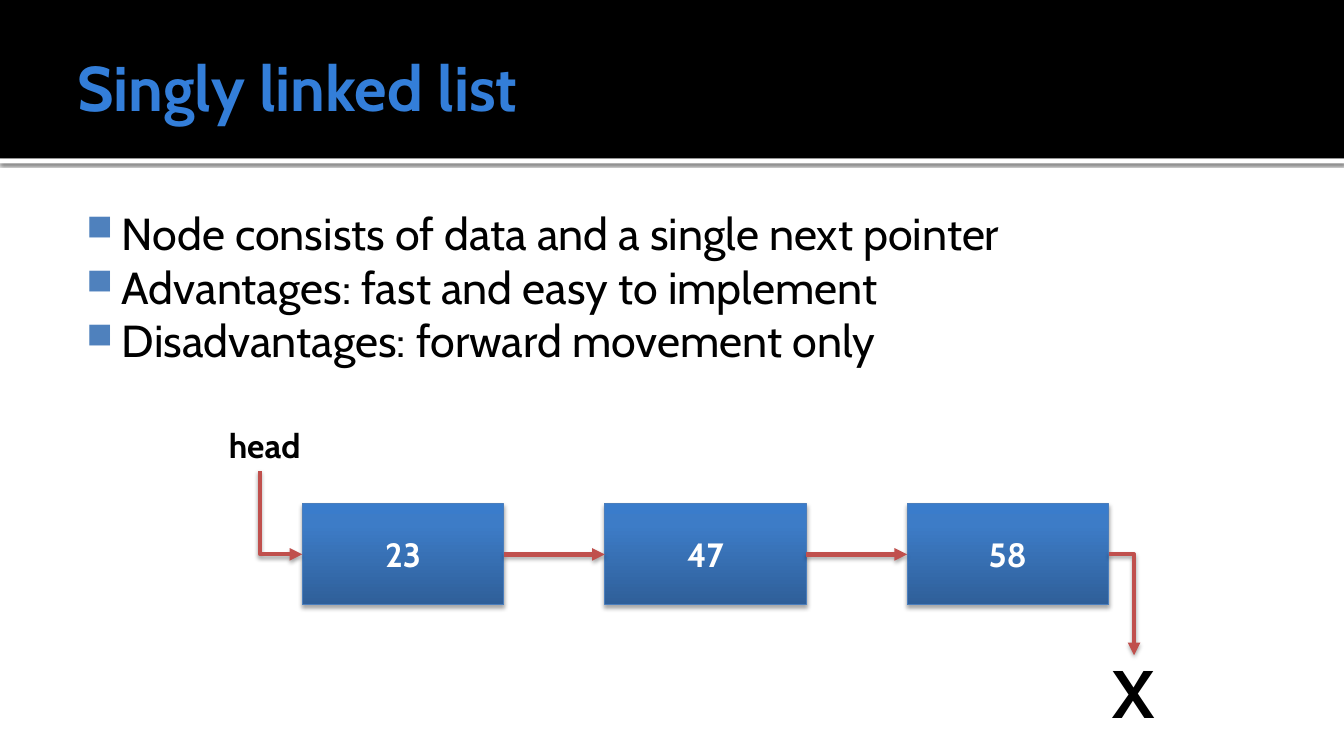
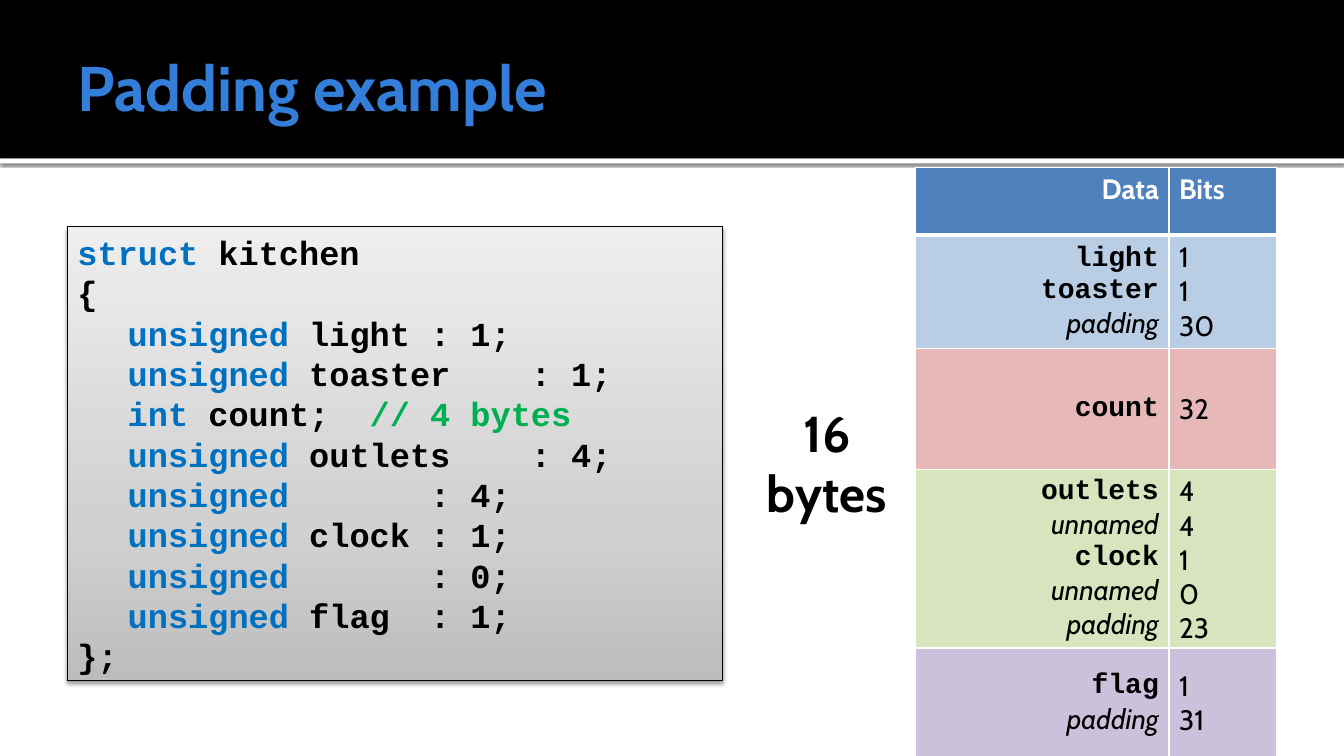
from dataclasses import dataclass

from lxml import etree
from pptx import Presentation
from pptx import util as u
from pptx.dml.color import RGBColor
from pptx.enum import shapes, text
from pptx.oxml import ns


@dataclass(frozen=True)
class Theme:
    font: str = "Cabin"
    code_font: str = "Courier New"
    black: str = "000000"
    white: str = "FFFFFF"
    title: str = "337ED9"
    accent: str = "4F81BD"
    arrow: str = "C0504D"
    node_line: str = "4B7EBC"
    keyword: str = "0070C0"
    comment: str = "00B050"
    node_stops: tuple = ((0, "2F5F99"), (80, "3D7CC7"), (100, "3A7CCB"))
    code_stops: tuple = ((0, "BDBDBD"), (35, "D1D1D1"), (100, "EEEEEE"))
    title_size: float = 45
    body_size: float = 32
    label_size: float = 24
    table_size: float = 20
    total_size: float = 36
    end_size: float = 48


THEME = Theme()
SLIDE_WIDTH, SLIDE_HEIGHT = 33.87, 19.05
MARGIN = 1.7
BAND_HEIGHT = 3.99
NODE_WIDTH, NODE_HEIGHT, NODE_TOP = 5.08, 2.54, 12.7
NODE_STEP = 7.62
CENTER, RIGHT = text.PP_ALIGN.CENTER, text.PP_ALIGN.RIGHT
MIDDLE = text.MSO_ANCHOR.MIDDLE

BULLETS = [
    "Node consists of data and a single next pointer",
    "Advantages: fast and easy to implement",
    "Disadvantages: forward movement only",
]
CODE = [
    ("struct ", "kitchen"),
    ("", "{"),
    ("unsigned ", "light\t: 1;"),
    ("unsigned ", "toaster\t: 1;"),
    ("int ", "count;  ", "// 4 bytes"),
    ("unsigned ", "outlets\t: 4;"),
    ("unsigned", "\t\t: 4;"),
    ("unsigned ", "clock\t: 1;"),
    ("unsigned", "\t\t: 0;"),
    ("unsigned ", "flag\t: 1;"),
    ("", "};"),
]
FIELD_GROUPS = [
    ("B9CDE5", 2.87, [("light", 1), ("toaster", 1), ("padding", 30)]),
    ("E6B9B8", 3.05, [("count", 32)]),
    ("D7E4BD", 4.42, [("outlets", 4), ("unnamed", 4), ("clock", 1),
                      ("unnamed", 0), ("padding", 23)]),
    ("CCC1DA", 2.79, [("flag", 1), ("padding", 31)]),
]


def rgb(color):
    return RGBColor.from_string(color)


def add_xml(parent, tag, **attributes):
    values = {key: str(value) for key, value in attributes.items()}
    return etree.SubElement(parent, ns.qn(tag), values)


def cm_box(left, top, width, height):
    return [u.Cm(value) for value in (left, top, width, height)]


def add_shadow(shape, alpha, blur, distance):
    effects = add_xml(shape._element.spPr, "a:effectLst")
    shadow = add_xml(effects, "a:outerShdw", blurRad=u.Pt(blur), dist=u.Pt(distance),
                     dir=5400000, algn="ctr", rotWithShape=0)
    color = add_xml(shadow, "a:srgbClr", val=THEME.black)
    add_xml(color, "a:alpha", val=alpha * 1000)


def set_gradient(shape, stops):
    shape.fill.gradient()
    gradient = shape._element.spPr.find(ns.qn("a:gradFill"))
    for child in list(gradient):
        gradient.remove(child)
    stop_list = add_xml(gradient, "a:gsLst")
    for position, color in stops:
        stop = add_xml(stop_list, "a:gs", pos=position * 1000)
        add_xml(stop, "a:srgbClr", val=color)
    add_xml(gradient, "a:lin", ang=16200000, scaled=0)


def add_rectangle(slide, box, fill=None, stops=None, line=None, shadow=None):
    shape = slide.shapes.add_shape(shapes.MSO_SHAPE.RECTANGLE, *cm_box(*box))
    if stops:
        set_gradient(shape, stops)
    else:
        shape.fill.solid()
        shape.fill.fore_color.rgb = rgb(fill)
    if line:
        shape.line.color.rgb = rgb(line)
        shape.line.width = u.Pt(0.75)
    else:
        shape.line.fill.background()
    if shadow:
        add_shadow(shape, *shadow)
    else:
        shape.shadow.inherit = False
    return shape


def write_text(paragraph, content, size, font=THEME.font, color=THEME.black,
               bold=False, italic=False, align=None):
    if align is not None:
        paragraph.alignment = align
    run = paragraph.add_run()
    run.text = content
    run.font.size = u.Pt(size)
    run.font.name = font
    run.font.color.rgb = rgb(color)
    run.font.bold = bold
    run.font.italic = italic


def make_paragraphs(frame, count):
    return [frame.paragraphs[0]] + [frame.add_paragraph() for _ in range(count - 1)]


def write_lines(frame, lines, **style):
    for paragraph, line in zip(make_paragraphs(frame, len(lines)), lines):
        write_text(paragraph, line, **style)


def add_text_box(slide, box, lines, anchor=None, insets=None, wrap=True, **style):
    frame = slide.shapes.add_textbox(*cm_box(*box)).text_frame
    frame.word_wrap = wrap
    if anchor is not None:
        frame.vertical_anchor = anchor
    if insets:
        (frame.margin_left, frame.margin_top,
         frame.margin_right, frame.margin_bottom) = [u.Cm(inset) for inset in insets]
    write_lines(frame, lines, **style)
    return frame


def set_bullet(paragraph):
    properties = paragraph._p.get_or_add_pPr()
    properties.set("marL", str(u.Cm(1.22)))
    properties.set("indent", str(u.Cm(-0.89)))
    color = add_xml(properties, "a:buClr")
    add_xml(color, "a:srgbClr", val=THEME.accent)
    add_xml(properties, "a:buSzPct", val=80000)
    add_xml(properties, "a:buChar", char="■")


def add_titled_slide(presentation, title):
    slide = presentation.slides.add_slide(presentation.slide_layouts[6])
    add_rectangle(slide, (0, BAND_HEIGHT, SLIDE_WIDTH, 0.13), THEME.white,
                  shadow=(60, 2.5, 0.8))
    add_rectangle(slide, (0, 0, SLIDE_WIDTH, BAND_HEIGHT), THEME.black)
    add_text_box(slide, (MARGIN, 0.43, 30.48, 3.48), [title], anchor=MIDDLE,
                 insets=(0.25, 0.13, 0.13, 0.13), size=THEME.title_size,
                 color=THEME.title, bold=True)
    return slide


def add_node(slide, index, value):
    box = (NODE_STEP * (index + 1), NODE_TOP, NODE_WIDTH, NODE_HEIGHT)
    node = add_rectangle(slide, box, stops=THEME.node_stops, line=THEME.node_line,
                         shadow=(35, 3.1, 1.8))
    node.text_frame.vertical_anchor = MIDDLE
    write_lines(node.text_frame, [value], size=THEME.label_size, color=THEME.white,
                bold=True, align=CENTER)
    return node


def add_arrow(slide, node, side, target=None, point=None, arrow_end="a:tailEnd"):
    kind = shapes.MSO_CONNECTOR.STRAIGHT if target else shapes.MSO_CONNECTOR.ELBOW
    end = [u.Cm(value) for value in point or (0, 0)]
    connector = slide.shapes.add_connector(kind, 0, 0, *end)
    connector.begin_connect(node, side)
    if target:
        connector.end_connect(target, 1)
    else:
        connector._element.spPr.prstGeom.set("prst", "bentConnector2")
    connector.line.color.rgb = rgb(THEME.arrow)
    connector.line.width = u.Pt(3)
    add_xml(connector.line._get_or_add_ln(), arrow_end, type="triangle")
    add_shadow(connector, 35, 3.1, 1.8)


def add_code(slide, box, lines):
    panel = add_rectangle(slide, box, stops=THEME.code_stops, line=THEME.black,
                          shadow=(38, 3.1, 1.6))
    frame = panel.text_frame
    frame.vertical_anchor = MIDDLE
    colors = (THEME.keyword, THEME.black, THEME.comment)
    for paragraph, parts in zip(make_paragraphs(frame, len(lines)), lines):
        paragraph.alignment = text.PP_ALIGN.LEFT
        properties = paragraph._p.get_or_add_pPr()
        properties.set("defTabSz", str(u.Cm(2.54)))
        if parts[0] and parts[0] != "struct ":
            properties.set("marL", str(u.Cm(1.27)))
            properties.set("indent", "0")
        for part, color in zip(parts, colors):
            if part:
                write_text(paragraph, part, THEME.label_size, THEME.code_font,
                           color, bold=True)


def style_cell(cell, fill, bottom_width=1):
    properties = cell._tc.get_or_add_tcPr()
    for side, width in (("L", 1), ("R", 1), ("T", 1), ("B", bottom_width)):
        border = add_xml(properties, f"a:ln{side}", w=u.Pt(width))
        color = add_xml(border, "a:solidFill")
        add_xml(color, "a:srgbClr", val=THEME.white)
    cell.fill.solid()
    cell.fill.fore_color.rgb = rgb(fill)


def add_field_table(slide, left, top, column_widths, header_height):
    heights = [header_height] + [height for _, height, _ in FIELD_GROUPS]
    box = cm_box(left, top, sum(column_widths), sum(heights))
    table = slide.shapes.add_table(len(heights), len(column_widths), *box).table
    table.horz_banding = False
    for column, width in zip(table.columns, column_widths):
        column.width = u.Cm(width)
    for row, height in zip(table.rows, heights):
        row.height = u.Cm(height)
    size = THEME.table_size
    for column, (heading, align) in enumerate((("Data", RIGHT), ("Bits", None))):
        cell = table.cell(0, column)
        style_cell(cell, THEME.accent, 3)
        write_lines(cell.text_frame, [heading], size=size, color=THEME.white,
                    bold=True, align=align)
    for row, (fill, _, fields) in enumerate(FIELD_GROUPS, 1):
        names, bits = table.cell(row, 0), table.cell(row, 1)
        for cell in (names, bits):
            style_cell(cell, fill)
            cell.vertical_anchor = MIDDLE
        for paragraph, (name, _) in zip(make_paragraphs(names.text_frame, len(fields)), fields):
            filler = name in ("padding", "unnamed")
            write_text(paragraph, name, size, THEME.font if filler else THEME.code_font,
                       bold=not filler, italic=filler, align=RIGHT)
        write_lines(bits.text_frame, [str(count) for _, count in fields], size=size)


def build_linked_list(presentation):
    slide = add_titled_slide(presentation, "Singly linked list")
    body = add_text_box(slide, (MARGIN, 4.93, 30.48, 12.85), BULLETS,
                        insets=(0.15, 0.25, 0.25, 0.13), size=THEME.body_size)
    for paragraph in body.paragraphs:
        set_bullet(paragraph)
    nodes = [add_node(slide, index, value) for index, value in enumerate(("23", "47", "58"))]
    for node, following in zip(nodes, nodes[1:]):
        add_arrow(slide, node, 3, target=following)
    add_arrow(slide, nodes[-1], 3, point=(28.58, 16.51))
    add_arrow(slide, nodes[0], 1, point=(6.56, 11.86), arrow_end="a:headEnd")
    add_text_box(slide, (27.52, 16.3, 2.12, 2.31), ["X"], size=THEME.end_size,
                 bold=True, align=CENTER)
    add_text_box(slide, (4.87, 10.58, 3.6, 1.27), ["head"], size=THEME.label_size,
                 bold=True, align=CENTER)


def build_padding(presentation):
    slide = add_titled_slide(presentation, "Padding example")
    add_field_table(slide, 23.07, 4.23, (6.39, 2.71), 1.69)
    add_code(slide, (MARGIN, 5.72, 16.51, 11.43), CODE)
    add_text_box(slide, (19.05, 10, 3.58, 3.32), ["16", "bytes"], wrap=False,
                 size=THEME.total_size, bold=True, align=CENTER)


def main():
    presentation = Presentation()
    presentation.slide_width = u.Cm(SLIDE_WIDTH)
    presentation.slide_height = u.Cm(SLIDE_HEIGHT)
    build_linked_list(presentation)
    build_padding(presentation)
    presentation.save("out.pptx")


if __name__ == "__main__":
    main()
